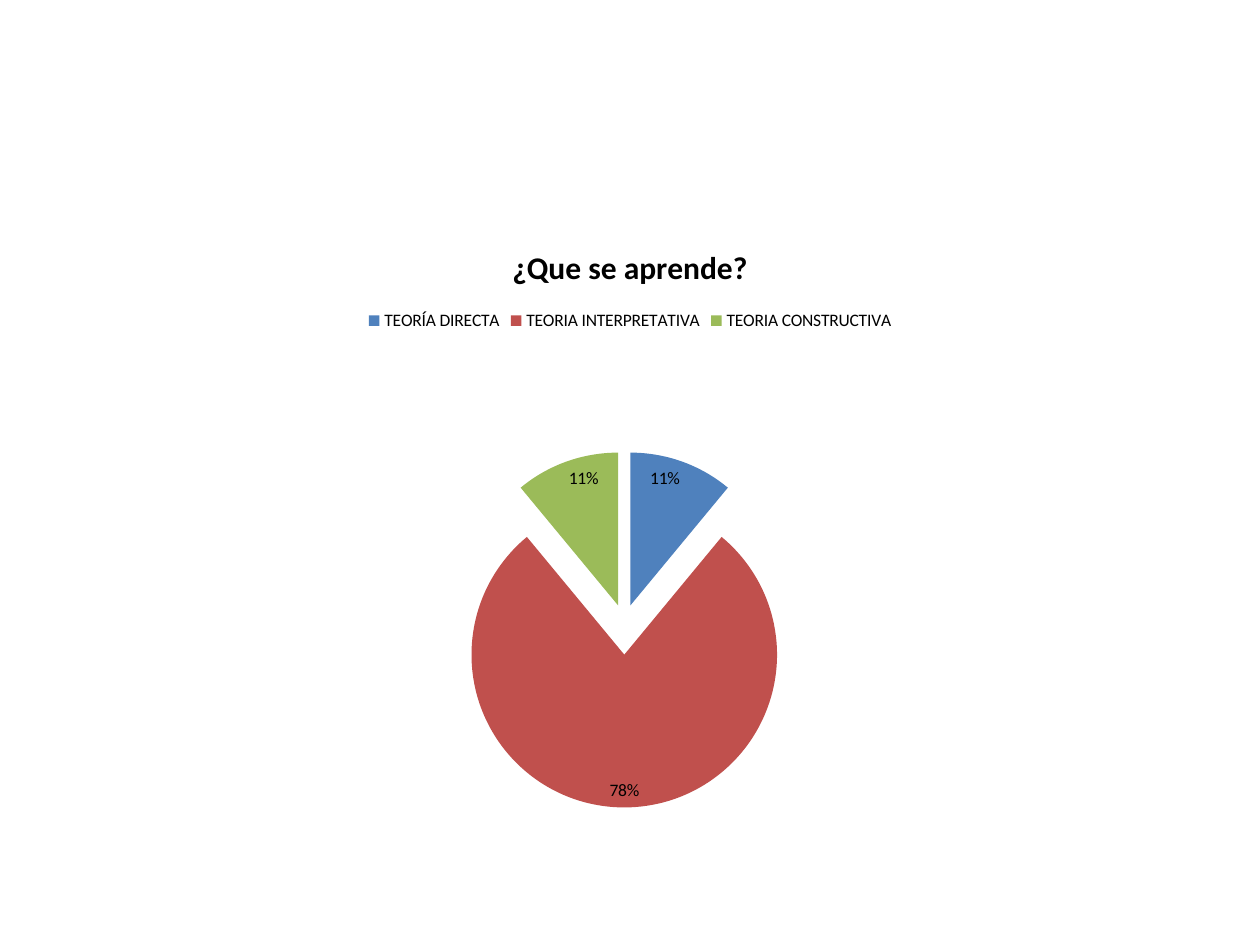
import pptx
import pptx.chart.data
import pptx.dml.color
import pptx.enum.chart
import pptx.oxml
import pptx.util

RGB = pptx.dml.color.RGBColor
BLACK = RGB(0x00, 0x00, 0x00)
BLUE = RGB(0x4F, 0x81, 0xBD)
RED = RGB(0xC0, 0x50, 0x4D)
GREEN = RGB(0x9B, 0xBB, 0x59)

WIDE, HIGH = pptx.util.Inches(10), pptx.util.Inches(7.5)
NS = 'xmlns:c="http://schemas.openxmlformats.org/drawingml/2006/chart"'
PLOT = {"x": 0.09, "y": 0.4, "w": 0.81, "h": 0.49}
SLICES = [
    ("TEORÍA DIRECTA", 11, BLUE, 12),
    ("TEORIA INTERPRETATIVA", 78, RED, 21),
    ("TEORIA CONSTRUCTIVA", 11, GREEN, 12),
]


def style(font, size=10, bold=False, color=BLACK, face="Calibri"):
    font.size, font.bold, font.name = pptx.util.Pt(size), bold, face
    font.color.rgb = color


def write(frame, text, **form):
    frame.text = text
    style(frame.paragraphs[0].runs[0].font, **form)


def place(chart, plot):
    """Fix the inner plot area, given as shares of the chart."""
    area = chart.element.chart.plotArea
    for old in area.findall("{*}layout"):
        area.remove(old)
    modes = '<c:xMode val="edge"/><c:yMode val="edge"/>'
    sizes = "".join(f'<c:{key} val="{val}"/>' for key, val in plot.items())
    area.insert(0, pptx.oxml.parse_xml(
        f'<c:layout {NS}><c:manualLayout><c:layoutTarget val="inner"/>'
        f"{modes}{sizes}</c:manualLayout></c:layout>"))


def explode(node, share):
    """Pull a slice out by a percentage of the radius."""
    part = pptx.oxml.parse_xml(f'<c:explosion {NS} val="{share}"/>')
    node.find("{*}spPr").addprevious(part)


def draw_pie(slide, title, slices, left, top, width, height):
    data = pptx.chart.data.CategoryChartData()
    data.categories = [name for name, *_ in slices]
    data.add_series("Series 1", [val for _, val, *_ in slices])
    kind = pptx.enum.chart.XL_CHART_TYPE.PIE
    chart = slide.shapes.add_chart(kind, left, top, width, height, data).chart
    style(chart.font)

    chart.has_title = True
    write(chart.chart_title.text_frame, title, size=18, bold=True)
    chart.chart_title.include_in_layout = False
    chart.has_legend = True
    chart.legend.position = pptx.enum.chart.XL_LEGEND_POSITION.TOP
    chart.legend.include_in_layout = False
    style(chart.legend.font)
    place(chart, PLOT)

    pie = chart.plots[0]
    pie.vary_by_categories = True
    row = pie.series[0]
    for spot, (_, _, color, share) in enumerate(slices):
        fill = row.points[spot].format.fill
        fill.solid()
        fill.fore_color.rgb = color
    for node, (*_, share) in zip(row._element.findall("{*}dPt"), slices):
        explode(node, share)

    tags = row.data_labels
    tags.show_percentage = True
    tags.show_value = False
    tags.number_format, tags.number_format_is_linked = "0%", False
    tags.position = pptx.enum.chart.XL_LABEL_POSITION.INSIDE_END
    style(tags.font)


def main():
    deck = pptx.Presentation()
    deck.slide_width, deck.slide_height = WIDE, HIGH
    slide = deck.slides.add_slide(deck.slide_layouts[6])
    draw_pie(slide, "¿Que se aprende?", SLICES, int(WIDE * 0.05),
             int(HIGH * 0.2333), int(WIDE * 0.9), int(HIGH * 0.66))
    deck.save("out.pptx")


if __name__ == "__main__":
    main()
